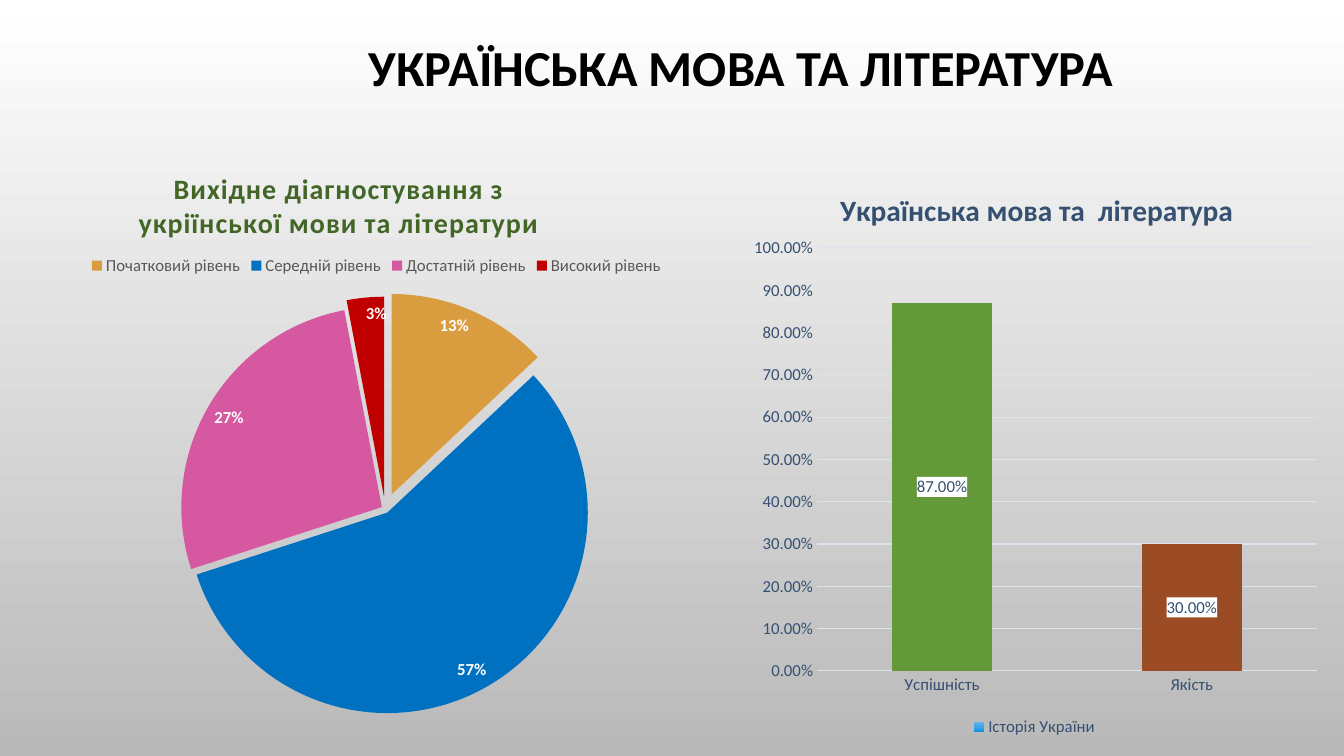
from copy import deepcopy
from dataclasses import dataclass

from lxml import etree
from pptx import Presentation
from pptx import util as u
from pptx.chart import data as chart_data
from pptx.dml import color
from pptx.enum import chart as chart_enum, text
from pptx.oxml import ns

Pt = u.Pt


@dataclass(frozen=True)
class Theme:
    font: str = "Calibri"
    heading_size: int = 36
    pie_title_size: int = 20
    column_title_size: int = 21
    label_size: int = 12
    base_size: int = 10
    black: str = "000000"
    white: str = "FFFFFF"
    pie_title: str = "426626"
    pie_legend: str = "595959"
    navy: str = "355071"
    grid: str = "DCE4EF"
    background: tuple = ("FFFFFF", "B9B9B9")
    pie_slices: tuple = ("D99C3F", "0070C0", "D658A0", "C00000")
    columns: tuple = ("649939", "9B4C25")
    series_gradient: tuple = ("6CB6F1", "3FA6EE", "1891DF")


THEME = Theme()


def rgb(value):
    return color.RGBColor.from_string(value)


def style(font, size, colour, bold=False):
    font.name, font.size, font.bold = THEME.font, Pt(size), bold
    font.color.rgb = rgb(colour)


def paint(fill, colour):
    fill.solid()
    fill.fore_color.rgb = rgb(colour)


def paint_gradient(fill, owner, colours):
    """Fill from top to bottom with evenly spaced colours; owner is the XML holding the fill."""
    fill.gradient()
    fill.gradient_angle = 270
    stop_list = next(owner.iter(ns.qn("a:gsLst")))
    while len(stop_list) < len(colours):
        stop_list.append(deepcopy(stop_list[-1]))
    for index, (stop, colour) in enumerate(zip(fill.gradient_stops, colours)):
        stop.position = index / (len(colours) - 1)
        stop.color.rgb = rgb(colour)


def place(element, index, inner=False, **fractions):
    """Fix a chart part at fractions (x, y, w, h) of the chart's box."""
    for old in element.findall(ns.qn("c:layout")):
        element.remove(old)
    layout = etree.Element(ns.qn("c:layout"))
    manual = etree.SubElement(layout, ns.qn("c:manualLayout"))
    settings = {"layoutTarget": "inner"} if inner else {}
    settings.update(xMode="edge", yMode="edge", **fractions)
    for name, value in settings.items():
        etree.SubElement(manual, ns.qn(f"c:{name}")).set("val", str(value))
    element.insert(index, layout)


def add_base_chart(slide, box, kind, categories, series_name, values, number_format):
    data = chart_data.CategoryChartData(number_format=number_format)
    data.categories = categories
    data.add_series(series_name, values)
    chart = slide.shapes.add_chart(kind, *map(Pt, box), data).chart
    style(chart.font, THEME.base_size, THEME.black)
    return chart


def add_chart_title(chart, wording, size, colour, x, y, spacing=0):
    chart.has_title = True
    frame = chart.chart_title.text_frame
    frame.text = wording
    for paragraph in frame.paragraphs:
        paragraph.alignment = text.PP_ALIGN.CENTER
        for run in paragraph.runs:
            style(run.font, size, colour, bold=True)
            run._r.get_or_add_rPr().set("spc", str(spacing))
    place(chart.chart_title._element, 1, x=x, y=y)


def add_legend(chart, position, colour):
    chart.has_legend = True
    chart.legend.position = position
    chart.legend.include_in_layout = False
    style(chart.legend.font, THEME.label_size, colour)


def paint_points(series, colours):
    for index, colour in enumerate(colours):
        paint(series.points[index].format.fill, colour)


def add_labels(series, number_format, colour, bold=False):
    labels = series.data_labels
    labels.number_format = number_format
    labels.number_format_is_linked = False
    style(labels.font, THEME.label_size, colour, bold)
    return labels


def add_level_pie(slide, box):
    chart = add_base_chart(
        slide, box, chart_enum.XL_CHART_TYPE.PIE,
        ["Початковий рівень", "Середній рівень", "Достатній рівень", "Високий рівень"],
        "Series 1", [13, 57, 27, 3], "General")
    add_chart_title(chart, "Вихідне діагностування з\nукріїнської мови та літератури",
                    THEME.pie_title_size, THEME.pie_title, 0.14, 0.01, spacing=60)
    add_legend(chart, chart_enum.XL_LEGEND_POSITION.TOP, THEME.pie_legend)
    place(chart.legend._element, 1, x=0.07, y=0.16)
    plot = chart.plots[0]
    plot.vary_by_categories = True
    series = plot.series[0]
    paint_points(series, THEME.pie_slices)
    for point, explosion in zip(series._element.findall(ns.qn("c:dPt")), (8, 2, 2, 6)):
        element = etree.Element(ns.qn("c:explosion"))
        element.set("val", str(explosion))
        point.find(ns.qn("c:spPr")).addprevious(element)
    labels = add_labels(series, "0%", THEME.white, bold=True)
    labels.show_value, labels.show_percentage = False, True
    labels.position = chart_enum.XL_LABEL_POSITION.INSIDE_END
    place(chart._chartSpace.chart.plotArea, 0, inner=True, x=0.21, y=0.26, w=0.57, h=0.71)


def style_axis(axis):
    axis.major_tick_mark = axis.minor_tick_mark = chart_enum.XL_TICK_MARK.NONE
    style(axis.tick_labels.font, THEME.label_size, THEME.navy)


def style_rule(line):
    line.width = Pt(0.75)
    paint(line.fill, THEME.grid)


def add_result_columns(slide, box):
    chart = add_base_chart(
        slide, box, chart_enum.XL_CHART_TYPE.COLUMN_STACKED,
        ["Успішність", "Якість"], "Історія України", [0.87, 0.3], "0.00%")
    add_chart_title(chart, "Українська мова та  література",
                    THEME.column_title_size, THEME.navy, 0.16, 0.04)
    add_legend(chart, chart_enum.XL_LEGEND_POSITION.BOTTOM, THEME.navy)
    plot = chart.plots[0]
    plot.vary_by_categories = False
    plot.gap_width, plot.overlap = 150, 100
    series = plot.series[0]
    paint_gradient(series.format.fill, series._element, THEME.series_gradient)
    paint_points(series, THEME.columns)
    labels = add_labels(series, "0.00%", THEME.navy)
    labels.show_value = True
    backing = etree.Element(ns.qn("c:spPr"))
    solid = etree.SubElement(backing, ns.qn("a:solidFill"))
    etree.SubElement(solid, ns.qn("a:srgbClr")).set("val", THEME.white)
    labels._element.find(ns.qn("c:txPr")).addprevious(backing)

    category_axis, value_axis = chart.category_axis, chart.value_axis
    for axis in (category_axis, value_axis):
        style_axis(axis)
    style_rule(category_axis.format.line)
    value_axis.format.line.fill.background()
    value_axis.has_major_gridlines = True
    style_rule(value_axis.major_gridlines.format.line)
    value_axis.minimum_scale, value_axis.maximum_scale = 0, 1
    value_axis.major_unit = 0.1
    value_axis.tick_labels.number_format = "0.00%"
    value_axis.tick_labels.number_format_is_linked = False
    place(chart._chartSpace.chart.plotArea, 0, inner=True, x=0.13, y=0.15, w=0.85, h=0.73)


def add_heading(slide, box):
    title = slide.shapes.title
    title.left, title.top, title.width, title.height = map(Pt, box)
    frame = title.text_frame
    frame.text = "УКРАЇНСЬКА МОВА ТА ЛІТЕРАТУРА"
    frame.vertical_anchor = text.MSO_ANCHOR.MIDDLE
    paragraph = frame.paragraphs[0]
    paragraph.alignment = text.PP_ALIGN.CENTER
    paragraph.line_spacing = 0.9
    style(paragraph.runs[0].font, THEME.heading_size, THEME.black, bold=True)


def main():
    presentation = Presentation()
    presentation.slide_width, presentation.slide_height = Pt(960), Pt(540)
    slide = presentation.slides.add_slide(presentation.slide_layouts[5])
    paint_gradient(slide.background.fill, slide._element, THEME.background)
    add_heading(slide, (178.5, 0, 702, 101))
    add_level_pie(slide, (26.5, 115, 502.5, 404.5))
    add_result_columns(slide, (529, 115, 420, 414))
    presentation.save("out.pptx")


if __name__ == "__main__":
    main()
